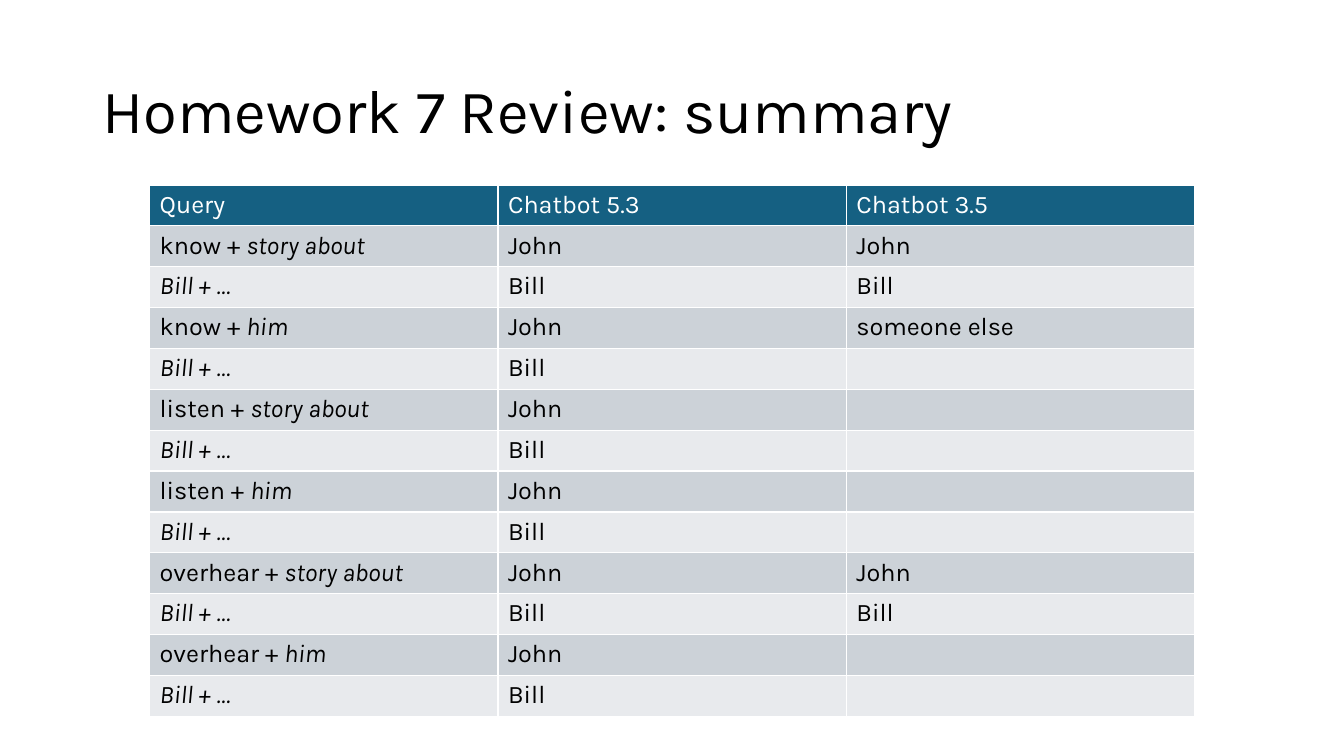
from pptx import Presentation
from pptx.dml.color import RGBColor
from pptx.enum.text import MSO_ANCHOR
from pptx.util import Cm, Pt

COLORS = {
    "text": "000000",
    "header_text": "FFFFFF",
    "header": "156082",
    "odd_row": "CCD2D8",
    "even_row": "E8EAED",
}
FONT = "Karla"
HEADINGS = ["Query", "Chatbot 5.3", "Chatbot 3.5"]

# Verb, italic object, and the older model's answers without and with the Bill variant
QUERIES = [
    ("know", "story about", "John", "Bill"),
    ("know", "him", "someone else", ""),
    ("listen", "story about", "", ""),
    ("listen", "him", "", ""),
    ("overhear", "story about", "John", "Bill"),
    ("overhear", "him", "", ""),
]


def add_run(paragraph, text, size, color="text", italic=False):
    run = paragraph.add_run()
    run.text = text
    font_format = {"name": FONT, "size": Pt(size), "bold": False, "italic": italic}
    for attribute, value in font_format.items():
        setattr(run.font, attribute, value)
    run.font.color.rgb = RGBColor.from_string(COLORS[color])


def add_title(slide, text):
    shape = slide.shapes.add_textbox(Cm(2.33), Cm(1.01), Cm(29.21), Cm(3.68))
    frame = shape.text_frame
    frame_format = {"word_wrap": True, "vertical_anchor": MSO_ANCHOR.MIDDLE}
    for attribute, value in frame_format.items():
        setattr(frame, attribute, value)
    paragraph = frame.paragraphs[0]
    paragraph.line_spacing = 0.9
    add_run(paragraph, text, 44)


def fill_cell(cell, runs, fill, color="text"):
    cell.fill.solid()
    cell.fill.fore_color.rgb = RGBColor.from_string(COLORS[fill])
    paragraph = cell.text_frame.paragraphs[0]
    paragraph.font.size = Pt(18)
    for text, italic in runs:
        if text:
            add_run(paragraph, text, 18, color, italic)


def build_rows():
    rows = []
    for verb, query_object, plain_answer, bill_answer in QUERIES:
        query = [(f"{verb} + ", False), (query_object, True)]
        rows.append([query, [("John", False)], [(plain_answer, False)]])
        rows.append([[("Bill + …", True)], [("Bill", False)], [(bill_answer, False)]])
    return rows


def add_summary_table(slide):
    rows = build_rows()
    row_count, column_count = len(rows) + 1, len(HEADINGS)
    column_width, row_height = Cm(8.78), Cm(1.03)
    table = slide.shapes.add_table(
        row_count, column_count, Cm(3.77), Cm(4.66),
        column_width * column_count, row_height * row_count,
    ).table
    # Header row
    for column, heading in enumerate(HEADINGS):
        fill_cell(table.cell(0, column), [(heading, False)], "header", "header_text")
    # Answer rows in alternating shades
    for row, cells in enumerate(rows, start=1):
        fill = "odd_row" if row % 2 else "even_row"
        for column, runs in enumerate(cells):
            fill_cell(table.cell(row, column), runs, fill)


def main():
    presentation = Presentation()
    presentation.slide_width = Cm(33.87)
    presentation.slide_height = Cm(19.05)
    slide = presentation.slides.add_slide(presentation.slide_layouts[6])
    add_title(slide, "Homework 7 Review: summary")
    add_summary_table(slide)
    presentation.save("out.pptx")


if __name__ == "__main__":
    main()
